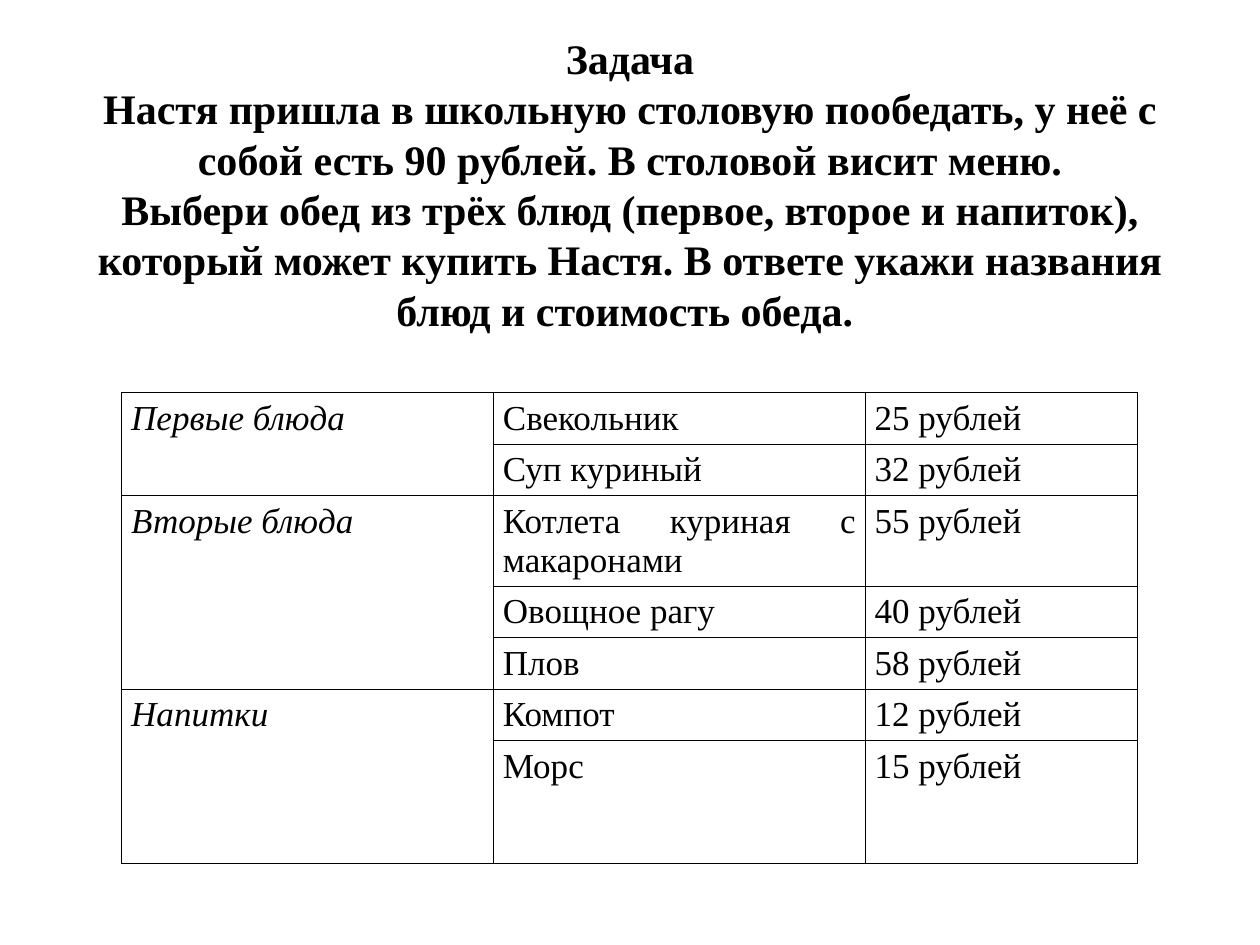
from lxml.etree import SubElement
from pptx import Presentation
from pptx.dml.color import RGBColor
from pptx.enum.text import MSO_ANCHOR, MSO_AUTO_SIZE, PP_ALIGN
from pptx.oxml.ns import qn
from pptx.util import Pt

BLACK = "000000"
TITLE_LINES = [
    "Задача",
    "Настя пришла в школьную столовую пообедать, у неё с собой есть 90 рублей. "
    "В столовой висит меню.",
    "Выбери обед из трёх блюд (первое, второе и напиток), который может купить Настя. "
    "В ответе укажи названия блюд и стоимость обеда. ",
]
MENU = {
    "Первые блюда": [("Свекольник", 25), ("Суп куриный", 32)],
    "Вторые блюда": [("Котлета куриная с макаронами", 55), ("Овощное рагу", 40), ("Плов", 58)],
    "Напитки": [("Компот", 12), ("Морс", 15)],
}
COLUMN_WIDTHS = [212.4, 212.4, 155.5]
ROW_HEIGHTS = [24, 24, 48, 24, 24, 24, 70]


def color(value):
    return RGBColor.from_string(value)


def set_attributes(target, values):
    for name, value in values.items():
        setattr(target, name, value)


def format_text(text_frame, alignment, **font_values):
    for paragraph in text_frame.paragraphs:
        paragraph.alignment = alignment
        for run in paragraph.runs:
            set_attributes(run.font, {"name": "Times New Roman", **font_values})
            run.font.color.rgb = color(BLACK)


def add_borders(cell, width=0.45):
    properties = cell._tc.get_or_add_tcPr()
    for side in ("lnL", "lnR", "lnT", "lnB"):
        line = SubElement(properties, qn(f"a:{side}"), w=str(Pt(width)))
        fill = SubElement(line, qn("a:solidFill"))
        SubElement(fill, qn("a:srgbClr"), val=BLACK)


def fill_cell(cell, text, italic=False):
    cell.text = text
    format_text(cell.text_frame, PP_ALIGN.JUSTIFY, size=Pt(20), italic=italic, bold=False)


def place_title(slide, left, top, width, height):
    title = slide.shapes.title
    set_attributes(title, {"left": Pt(left), "top": Pt(top),
                           "width": Pt(width), "height": Pt(height)})
    title.text_frame.text = "\v".join(TITLE_LINES)
    # The deeper bottom margin lifts the centred text away from the table
    set_attributes(title.text_frame, {
        "word_wrap": True, "auto_size": MSO_AUTO_SIZE.NONE,
        "vertical_anchor": MSO_ANCHOR.MIDDLE,
        "margin_top": Pt(3.6), "margin_bottom": Pt(28.6)})
    format_text(title.text_frame, PP_ALIGN.CENTER, size=Pt(24), bold=True)


def place_menu(slide, left, top):
    table = slide.shapes.add_table(
        len(ROW_HEIGHTS), len(COLUMN_WIDTHS), Pt(left), Pt(top),
        Pt(sum(COLUMN_WIDTHS)), Pt(sum(ROW_HEIGHTS))).table
    set_attributes(table, {"first_row": False, "horz_banding": False})
    for column, width in zip(table.columns, COLUMN_WIDTHS):
        column.width = Pt(width)
    for row, height in zip(table.rows, ROW_HEIGHTS):
        row.height = Pt(height)

    # Plain bordered cells
    for cell in table.iter_cells():
        set_attributes(cell, {"margin_left": Pt(5.4), "margin_right": Pt(5.4),
                              "margin_top": Pt(3.6), "margin_bottom": Pt(3.6)})
        add_borders(cell)
        cell.fill.background()

    # One merged heading per course, then its dishes and prices
    first_row = 0
    for course, dishes in MENU.items():
        heading = table.cell(first_row, 0)
        heading.merge(table.cell(first_row + len(dishes) - 1, 0))
        fill_cell(heading, course, italic=True)
        for row_index, (dish, price) in enumerate(dishes, first_row):
            fill_cell(table.cell(row_index, 1), dish)
            fill_cell(table.cell(row_index, 2), f"{price} рублей")
        first_row += len(dishes)


def main():
    presentation = Presentation()
    set_attributes(presentation, {"slide_width": Pt(720), "slide_height": Pt(540)})
    slide = presentation.slides.add_slide(presentation.slide_layouts.get_by_name("Title Only"))
    place_title(slide, 36, 21.6, 648, 191.5)
    place_menu(slide, 69.6, 224.4)
    presentation.save("out.pptx")


if __name__ == "__main__":
    main()
